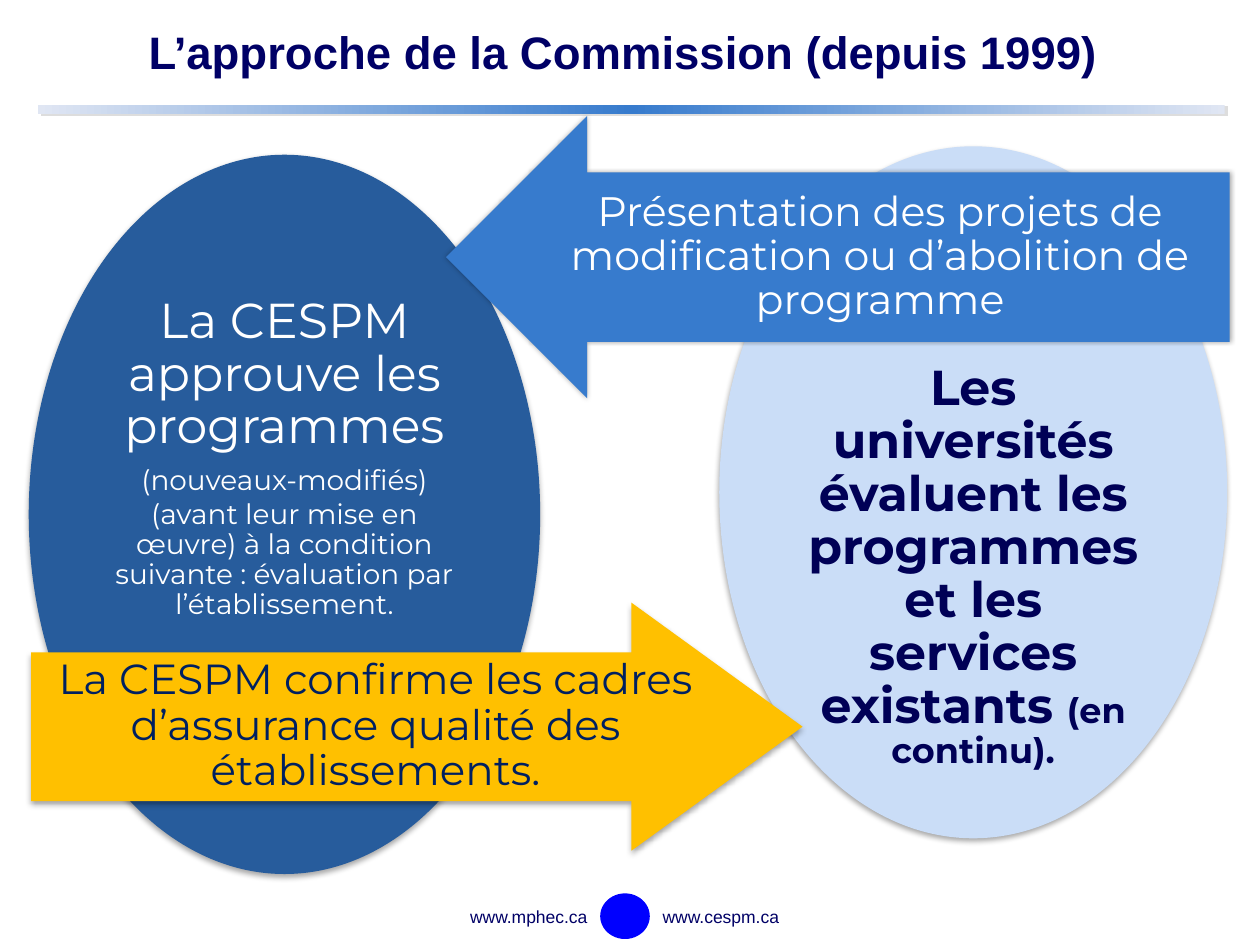
from lxml import etree
from pptx import Presentation
from pptx.dml.color import RGBColor
from pptx.enum.shapes import MSO_SHAPE as Shape
from pptx.enum.text import MSO_ANCHOR as Anchor, PP_ALIGN as Align
from pptx.oxml import parse_xml
from pptx.oxml.ns import nsdecls, qn
from pptx.util import Cm, Pt

COLORS = {
    "navy": "000066", "ink": "000056", "deep": "002060", "white": "FFFFFF",
    "dark blue": "275C9C", "blue": "377BCD", "pale blue": "CADDF7",
    "gold": "FFC000", "emblem": "0000FF", "bar edge": "E0E6F3",
    "grey": "DDDDDD", "black": "000000",
}
TITLE = "L’approche de la Commission (depuis 1999)"
TITLE_BOX = (2.74, 0.08, 21.92, 2.06)
BAR_BOX = (0.76, 2.11, 23.93, 0.2)
BAR_STOPS = [(0, "bar edge"), (50, "blue"), (100, "bar edge")]
EMBLEM_BOX = (12.1, 18.01, 1, 0.92)
ADDRESSES = [
    ("www.mphec.ca", (7.49, 18.14, 4.6, 0.69), Align.RIGHT),
    ("www.cespm.ca", (13.11, 18.14, 3.18, 0.69), Align.LEFT),
]
# kind, box, adjustments, fill, shadow distance, anchor, margins, text colour, bold, runs
DIAGRAM = [
    dict(kind=Shape.OVAL, box=(0.58, 3.12, 10.31, 14.5), fill="dark blue",
         anchor=Anchor.TOP, margins=(0, 0.72, 0, 0), color="white",
         runs=[("La CESPM approuve les programmes", 28),
               (" (nouveaux-modifiés)", 16), (" ", 24),
               ("(avant leur mise en œuvre) à la condition suivante\u00a0: "
                "évaluation par l’établissement.", 16)]),
    dict(kind=Shape.OVAL, box=(14.5, 2.95, 10.24, 13.95), fill="pale blue",
         anchor=Anchor.TOP, margins=(0, 2.33, 0, 0), color="ink", bold=True,
         runs=[("Les universités évaluent les programmes et les services existants ", 28),
               ("(en continu).", 20)]),
    dict(kind=Shape.RIGHT_ARROW, box=(0.63, 12.15, 15.55, 5), fill="gold",
         adjustments=(0.6, 0.69), margins=(0.4, 0, 0, 0), color="deep",
         runs=[("La CESPM confirme les cadres d’assurance qualité des établissements.", 24)]),
    dict(kind=Shape.LEFT_ARROW, box=(8.99, 2.34, 15.8, 5.69), fill="blue",
         adjustments=(0.6, 0.5), margins=(0.25, 0.13, 0.25, 0.13), color="white",
         distance=0,
         runs=[("Présentation des projets de modification ou d’abolition de programme", 23.5)]),
]


def rgb(name):
    """Return the named colour."""
    return RGBColor.from_string(COLORS[name])


def add_runs(paragraph, runs, font, color, bold=False):
    """Add (text, size) runs in one font and colour."""
    for text, size in runs:
        run = paragraph.add_run()
        run.text = text
        run.font.name, run.font.size, run.font.bold = font, Pt(size), bold
        run.font.color.rgb = rgb(color)


def set_shadow(shape, color, opacity, blur, distance, angle):
    """Give a shape an outer shadow."""
    shape.shadow.inherit = False
    effects = shape._element.spPr.find(qn("a:effectLst"))
    shadow = etree.SubElement(
        effects, qn("a:outerShdw"), blurRad=str(Pt(blur)), dist=str(Pt(distance)),
        dir=str(angle * 60000), rotWithShape="0")
    tint = etree.SubElement(shadow, qn("a:srgbClr"), val=COLORS[color])
    etree.SubElement(tint, qn("a:alpha"), val=str(opacity * 1000))


def add_shape(slide, kind, box, fill):
    """Add a filled shape without outline or shadow."""
    shape = slide.shapes.add_shape(kind, *map(Cm, box))
    shape.shadow.inherit = False
    shape.fill.solid()
    shape.fill.fore_color.rgb = rgb(fill)
    shape.line.fill.background()
    return shape


def set_margins(frame, margins):
    """Set left, top, right and bottom text margins."""
    (frame.margin_left, frame.margin_top,
     frame.margin_right, frame.margin_bottom) = map(Cm, margins)


def add_bar(slide):
    """Add the gradient rule under the title."""
    bar = add_shape(slide, Shape.RECTANGLE, BAR_BOX, "blue")
    stops = "".join(
        f'<a:gs pos="{place * 1000}"><a:srgbClr val="{COLORS[color]}"/></a:gs>'
        for place, color in BAR_STOPS)
    gradient = parse_xml(
        f'<a:gradFill {nsdecls("a")} rotWithShape="1"><a:gsLst>{stops}</a:gsLst>'
        '<a:lin ang="0" scaled="1"/></a:gradFill>')
    properties = bar._element.spPr
    properties.replace(properties.find(qn("a:solidFill")), gradient)
    set_shadow(bar, "grey", 100, 0, 2.2, 27)


def add_diagram_part(slide, kind, box, fill, margins, color, runs, bold=False,
                     anchor=Anchor.MIDDLE, adjustments=(), distance=1.8):
    """Add one oval or arrow with its text."""
    shape = add_shape(slide, kind, box, fill)
    for index, value in enumerate(adjustments):
        shape.adjustments[index] = value
    set_shadow(shape, "black", 35, 3.1, distance, 90)
    frame = shape.text_frame
    frame.word_wrap, frame.vertical_anchor = True, anchor
    set_margins(frame, margins)
    paragraph = frame.paragraphs[0]
    paragraph.alignment, paragraph.line_spacing = Align.CENTER, 0.9
    add_runs(paragraph, runs, "Montserrat", color, bold)


def main():
    """Build the slide."""
    presentation = Presentation()
    presentation.slide_width, presentation.slide_height = Cm(25.4), Cm(19.05)
    slide = presentation.slides.add_slide(presentation.slide_layouts[5])

    title = slide.shapes.title
    title.left, title.top, title.width, title.height = map(Cm, TITLE_BOX)
    title.text_frame.vertical_anchor = Anchor.MIDDLE
    paragraph = title.text_frame.paragraphs[0]
    paragraph.alignment, paragraph.line_spacing = Align.LEFT, 0.9
    add_runs(paragraph, [(TITLE, 26)], "Arial", "navy", True)

    add_bar(slide)
    add_shape(slide, Shape.OVAL, EMBLEM_BOX, "emblem")
    for text, box, alignment in ADDRESSES:
        frame = slide.shapes.add_textbox(*map(Cm, box)).text_frame
        frame.word_wrap = True
        frame.paragraphs[0].alignment = alignment
        add_runs(frame.paragraphs[0], [(text, 10)], "Arial", "navy")
    for part in DIAGRAM:
        add_diagram_part(slide, **part)
    presentation.save("out.pptx")


if __name__ == "__main__":
    main()
